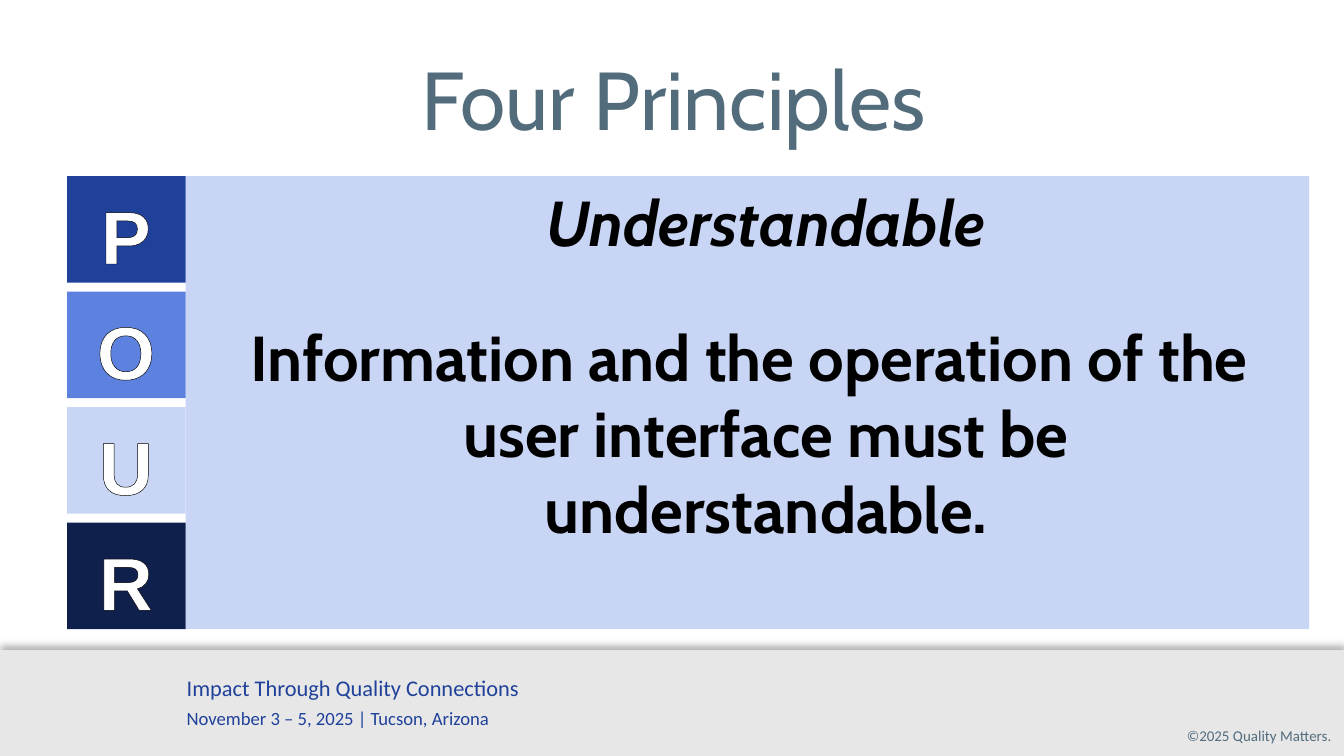
from lxml import etree
from pptx import Presentation
from pptx.dml.color import RGBColor
from pptx.enum.shapes import MSO_SHAPE
from pptx.enum.text import MSO_ANCHOR, MSO_AUTO_SIZE, PP_ALIGN
from pptx.oxml.ns import qn
from pptx.util import Cm, Pt

RECTANGLE = MSO_SHAPE.RECTANGLE
TOP, MIDDLE = MSO_ANCHOR.TOP, MSO_ANCHOR.MIDDLE
LEFT, CENTER, RIGHT = PP_ALIGN.LEFT, PP_ALIGN.CENTER, PP_ALIGN.RIGHT
NO_AUTOFIT = MSO_AUTO_SIZE.NONE

BLUE, SLATE, PALE = "1F419A", "526C7C", "C9D5F4"
TILES = [("P", BLUE), ("O", "5D81DE"), ("U", PALE), ("R", "10204D")]


def color(value):
    return RGBColor.from_string(value)


def set_attributes(target, values):
    for name, value in values.items():
        setattr(target, name, value)


def place(shape, box):
    lengths = [Cm(value) for value in box]
    set_attributes(shape, dict(zip(("left", "top", "width", "height"), lengths)))


def set_frame(shape, anchor=TOP, margins=(0.25, 0.13, 0.25, 0.13)):
    """Margins are left, top, right and bottom in centimetres."""
    frame = shape.text_frame
    names = ("margin_left", "margin_top", "margin_right", "margin_bottom")
    set_attributes(frame, dict(zip(names, [Cm(value) for value in margins])))
    set_attributes(frame, {"word_wrap": True, "auto_size": NO_AUTOFIT,
                           "vertical_anchor": anchor})
    return frame


def write(paragraph, text, font_color, align=LEFT, space_before=0, **font):
    set_attributes(paragraph, {"alignment": align,
                               "space_before": Pt(space_before)})
    run = paragraph.add_run()
    run.text = text
    set_attributes(run.font, font)
    run.font.color.rgb = color(font_color)
    return run


def outline_text(run, line_color="000000"):
    properties = run.font._element
    line = etree.Element(qn("a:ln"), w=str(Pt(0.75)))
    fill = etree.SubElement(line, qn("a:solidFill"))
    etree.SubElement(fill, qn("a:srgbClr"), val=line_color)
    properties.insert(0, line)


def set_indent(paragraph, left, first):
    properties = paragraph._p.get_or_add_pPr()
    properties.set("marL", str(Cm(left)))
    properties.set("indent", str(Cm(first)))
    etree.SubElement(properties, qn("a:buNone"))


def add_rectangle(slide, box, fill):
    shape = slide.shapes.add_shape(RECTANGLE, *[Cm(value) for value in box])
    shape.shadow.inherit = False
    shape.fill.solid()
    shape.fill.fore_color.rgb = color(fill)
    shape.line.fill.background()
    return shape


def add_text_box(slide, box, **frame_format):
    shape = slide.shapes.add_textbox(*[Cm(value) for value in box])
    return set_frame(shape, **frame_format)


def add_upward_shadow(shape):
    effects = shape._element.spPr.find(qn("a:effectLst"))
    shadow = etree.SubElement(effects, qn("a:outerShdw"), blurRad=str(Pt(4)),
                              dist=str(Pt(3)), dir="16200000", rotWithShape="0")
    black = etree.SubElement(shadow, qn("a:srgbClr"), val="000000")
    etree.SubElement(black, qn("a:alpha"), val="30000")


def add_footer(slide, box):
    left, top, width, height = box
    add_upward_shadow(add_rectangle(slide, box, "E7E7E7"))

    frame = add_text_box(slide, (left + width - 4.27, top + 1.32, 4.04, 0.61),
                         margins=(0.25, 0.13, 0, 0.13))
    write(frame.paragraphs[0], "©2025 Quality Matters.", SLATE, RIGHT,
          name="Calibri", size=Pt(8))

    frame = add_text_box(slide, (left + 3.28, top + 0.33, 16.23, 1.3))
    write(frame.paragraphs[0], "Impact Through Quality Connections", BLUE,
          name="Calibri", size=Pt(12))
    write(frame.add_paragraph(), "November 3 – 5, 2025 | Tucson, Arizona", BLUE,
          space_before=3, name="Calibri", size=Pt(10))


def fill_title(slide, box):
    title = slide.shapes.title
    place(title, box)
    frame = set_frame(title, MIDDLE)
    write(frame.paragraphs[0], "Four Principles", SLATE, CENTER,
          name="Cabin", size=Pt(44))


def fill_principle(slide, box):
    body = slide.placeholders[1]
    place(body, box)
    body.fill.solid()
    body.fill.fore_color.rgb = color(PALE)
    frame = set_frame(body, margins=(0.3, 0.13, 0.23, 0.13))
    font = {"name": "Cabin", "size": Pt(34), "bold": True}

    heading = frame.paragraphs[0]
    set_indent(heading, 1.27, -0.64)
    outline_text(write(heading, "Understandable", "000000", CENTER,
                       italic=True, **font))

    statement = frame.add_paragraph()
    set_indent(statement, 0.64, -0.64)
    outline_text(write(
        statement,
        "Information and the operation of the user interface must be understandable.",
        "000000", CENTER, space_before=31.5, **font))


def add_letter_tiles(slide, box, gap=0.17):
    left, top, width, height = box
    tile_height = (height - gap * (len(TILES) - 1)) / len(TILES)
    for index, (letter, fill) in enumerate(TILES):
        tile_top = top + index * (tile_height + gap)
        add_rectangle(slide, (left, tile_top, width, tile_height), fill)
        frame = add_text_box(slide, (left + 0.03, tile_top, width - 0.08, 1.96),
                             margins=(0.25, 0.25, 0.25, 0.25))
        outline_text(write(frame.paragraphs[0], letter, "FFFFFF", CENTER,
                           name="Arial", size=Pt(40), bold=True))


def main():
    presentation = Presentation()
    presentation.slide_width, presentation.slide_height = Cm(25.4), Cm(14.29)
    slide = presentation.slides.add_slide(presentation.slide_layouts[1])
    add_footer(slide, (0, 12.29, 25.4, 2))
    fill_title(slide, (1.3, 0.66, 22.86, 2.39))
    fill_principle(slide, (3.51, 3.33, 21.23, 8.56))
    add_letter_tiles(slide, (1.27, 3.33, 2.24, 8.56))
    presentation.save("out.pptx")


if __name__ == "__main__":
    main()
